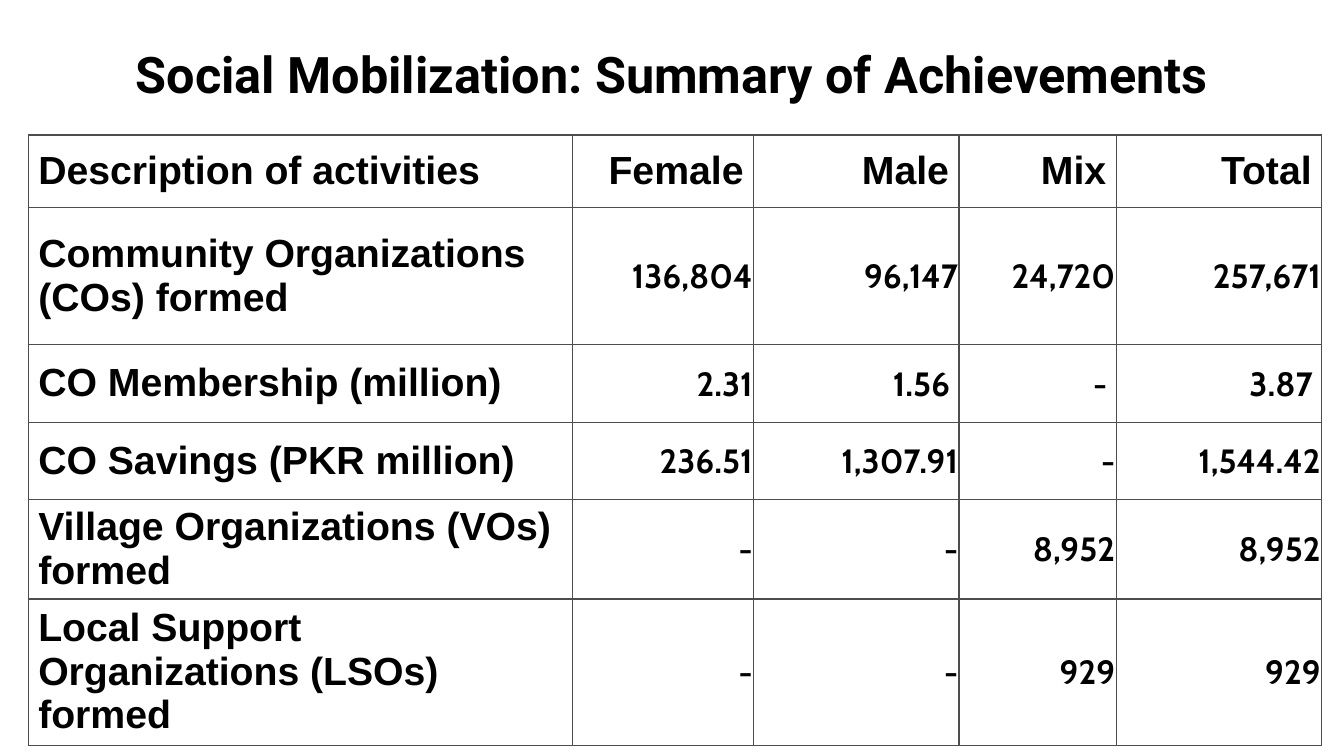
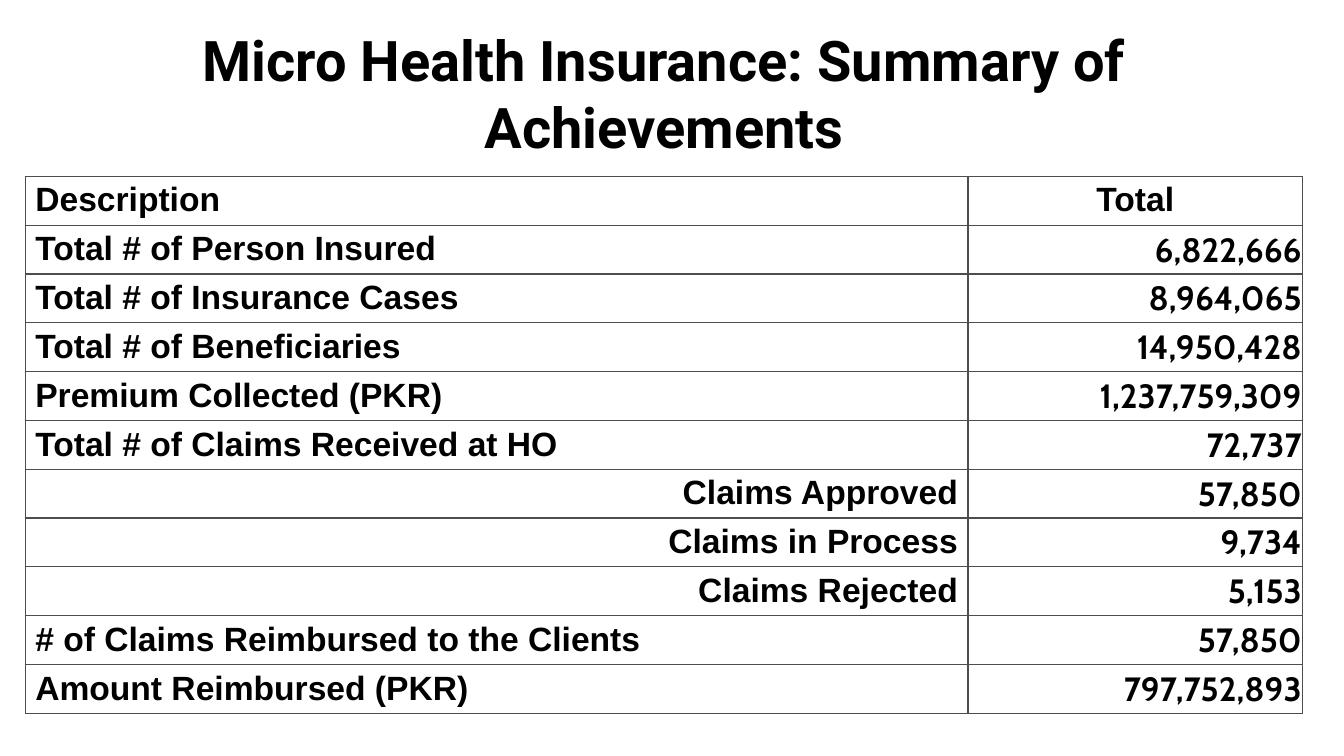
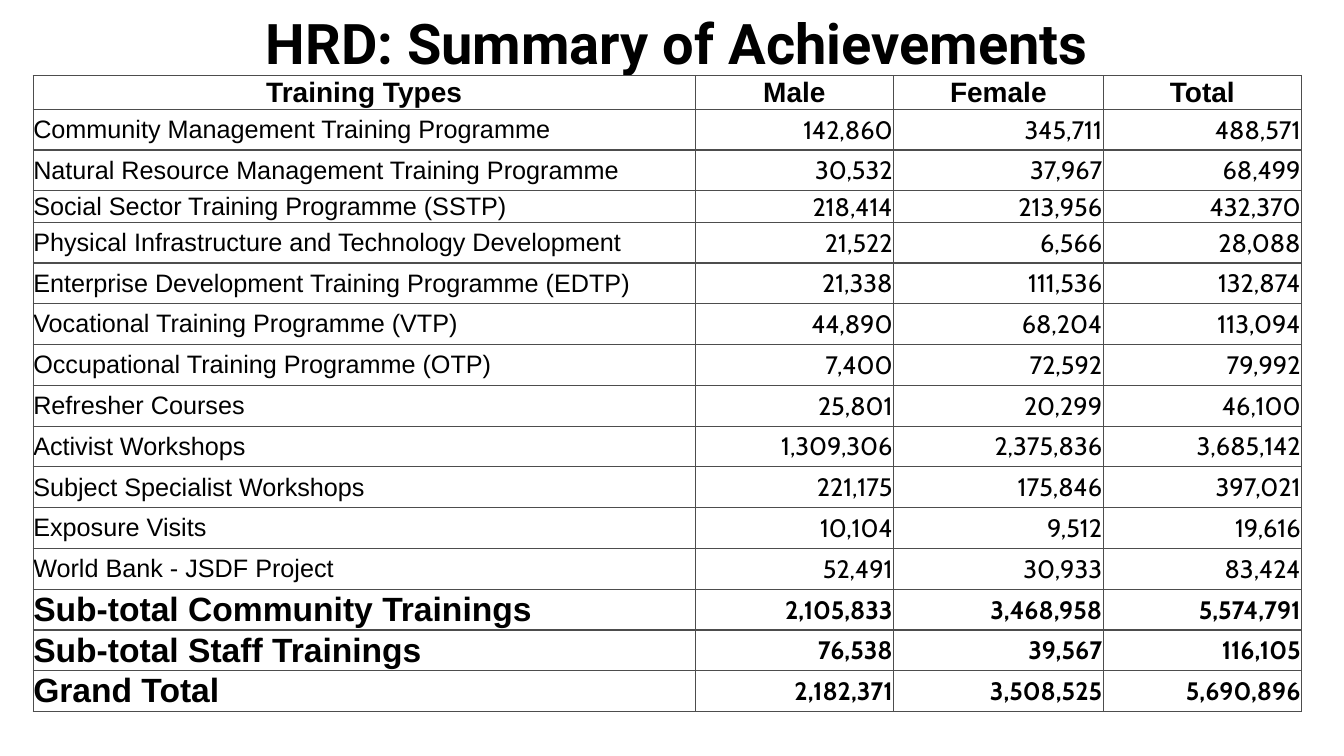
from collections import namedtuple

from lxml import etree
from pptx import Presentation
from pptx.dml.color import RGBColor
from pptx.enum.text import MSO_ANCHOR, PP_ALIGN
from pptx.oxml.ns import qn
from pptx.util import Inches, Pt

LEFT, CENTER, RIGHT = PP_ALIGN.LEFT, PP_ALIGN.CENTER, PP_ALIGN.RIGHT
MIDDLE = MSO_ANCHOR.MIDDLE

BLACK = RGBColor(0x00, 0x00, 0x00)
WHITE = RGBColor(0xFF, 0xFF, 0xFF)
RULE = RGBColor(0x4D, 0x4D, 0x4D)
TITLE_FONT, LABEL_FONT, FIGURE_FONT = "Roboto", "Arial", "Cabin"
BLANK_LAYOUT = 6

Box = namedtuple("Box", "left top width height")
CellStyle = namedtuple("CellStyle", "font size bold align insets")
ROOMY = (0.1, 0.02, 0.1, 0.03)
NARROW = (0.01, 0.01, 0.01, 0)
INDENTED = (0.01, 0.01, 0.09, 0)
TIGHT = (0, 0, 0, 0)

MOBILIZATION = [
    ("Description of activities", "Female", "Male", "Mix", "Total"),
    ("Community Organizations (COs) formed", "136,804", "96,147", "24,720", "257,671"),
    ("CO Membership (million)", "2.31", "1.56", "-", "3.87"),
    ("CO Savings (PKR million)", "236.51", "1,307.91", "-", "1,544.42"),
    ("Village Organizations (VOs) formed", "-", "-", "8,952", "8,952"),
    ("Local Support Organizations (LSOs) formed", "-", "-", "929", "929"),
]
MEMBERSHIP_ROW = 2

INSURANCE = [
    ("Description", "Total"),
    ("Total # of Person Insured", "6,822,666"),
    ("Total # of Insurance Cases", "8,964,065"),
    ("Total # of Beneficiaries", "14,950,428"),
    ("Premium Collected (PKR)", "1,237,759,309"),
    ("Total # of Claims Received at HO", "72,737"),
    ("Claims Approved", "57,850"),
    ("Claims in Process", "9,734"),
    ("Claims Rejected", "5,153"),
    ("# of Claims Reimbursed to the Clients", "57,850"),
    ("Amount Reimbursed (PKR)", "797,752,893"),
]
CLAIM_OUTCOME_ROWS = range(6, 9)

TRAINING = [
    ("Training Types", "Male", "Female", "Total"),
    ("Community Management Training Programme", "142,860", "345,711", "488,571"),
    ("Natural Resource Management Training Programme", "30,532", "37,967", "68,499"),
    ("Social Sector Training Programme (SSTP)", "218,414", "213,956", "432,370"),
    ("Physical Infrastructure and Technology Development", "21,522", "6,566", "28,088"),
    ("Enterprise Development Training Programme (EDTP)", "21,338", "111,536", "132,874"),
    ("Vocational Training Programme (VTP)", "44,890", "68,204", "113,094"),
    ("Occupational Training Programme (OTP)", "7,400", "72,592", "79,992"),
    ("Refresher Courses", "25,801", "20,299", "46,100"),
    ("Activist Workshops", "1,309,306", "2,375,836", "3,685,142"),
    ("Subject Specialist Workshops", "221,175", "175,846", "397,021"),
    ("Exposure Visits", "10,104", "9,512", "19,616"),
    ("World Bank - JSDF Project", "52,491", "30,933", "83,424"),
    ("Sub-total Community Trainings", "2,105,833", "3,468,958", "5,574,791"),
    ("Sub-total Staff Trainings", "76,538", "39,567", "116,105"),
    ("Grand Total", "2,182,371", "3,508,525", "5,690,896"),
]
FIRST_TOTAL_ROW = 13


def inches(box):
    """Convert a box to slide lengths."""
    return [Inches(length) for length in box]


def set_paragraph(paragraph, text, font, size, bold, align):
    """Write one paragraph in the shared text colour."""
    paragraph.text = text
    paragraph.alignment = align
    paragraph.font.name = font
    paragraph.font.size = Pt(size)
    paragraph.font.bold = bold
    paragraph.font.color.rgb = BLACK


def add_title(slide, box, text, size):
    """Place the centred bold title in its box."""
    frame = slide.shapes.add_textbox(*inches(box)).text_frame
    frame.word_wrap = True
    frame.vertical_anchor = MIDDLE
    set_paragraph(frame.paragraphs[0], text, TITLE_FONT, size, True, CENTER)


def add_borders(cell):
    """Rule all four sides of a cell."""
    properties = cell._tc.get_or_add_tcPr()
    for side in ("a:lnL", "a:lnR", "a:lnT", "a:lnB"):
        line = etree.SubElement(properties, qn(side), w=str(Pt(1)))
        fill = etree.SubElement(line, qn("a:solidFill"))
        etree.SubElement(fill, qn("a:srgbClr"), val=str(RULE))


def fill_cell(cell, text, style):
    """Write and format one table cell."""
    add_borders(cell)
    cell.fill.solid()
    cell.fill.fore_color.rgb = WHITE
    cell.vertical_anchor = MIDDLE
    (cell.margin_left, cell.margin_top,
     cell.margin_right, cell.margin_bottom) = inches(style.insets)
    set_paragraph(cell.text_frame.paragraphs[0], text,
                  style.font, style.size, style.bold, style.align)


def add_grid(slide, box, records, column_weights, row_weights, style_of):
    """Share the box among weighted columns and rows of a table."""
    table = slide.shapes.add_table(
        len(records), len(column_weights), *inches(box)).table
    table.horz_banding = False
    for column, weight in zip(table.columns, column_weights):
        column.width = Inches(box.width * weight / sum(column_weights))
    for row, weight in zip(table.rows, row_weights):
        row.height = Inches(box.height * weight / sum(row_weights))
    for r, record in enumerate(records):
        for c, text in enumerate(record):
            fill_cell(table.cell(r, c), text, style_of(r, c))


def mobilization_style(row, column):
    """Style a cell of the social mobilization table."""
    if row == 0 or column == 0:
        return CellStyle(LABEL_FONT, 28, True, RIGHT if column else LEFT, ROOMY)
    insets = INDENTED if row == MEMBERSHIP_ROW and column > 1 else NARROW
    return CellStyle(FIGURE_FONT, 24, True, RIGHT, insets)


def insurance_style(row, column):
    """Style a cell of the health insurance table."""
    if row == 0:
        return CellStyle(LABEL_FONT, 24, True, CENTER if column else LEFT, ROOMY)
    if column == 0:
        align = RIGHT if row in CLAIM_OUTCOME_ROWS else LEFT
        return CellStyle(LABEL_FONT, 24, True, align, ROOMY)
    return CellStyle(FIGURE_FONT, 24, True, RIGHT, NARROW)


def training_style(row, column):
    """Style a cell of the training table."""
    if row == 0:
        return CellStyle(LABEL_FONT, 20, True, CENTER, TIGHT)
    is_total = row >= FIRST_TOTAL_ROW
    if column == 0:
        return CellStyle(LABEL_FONT, 24 if is_total else 18, is_total, LEFT, TIGHT)
    return CellStyle(FIGURE_FONT, 18, is_total, RIGHT, NARROW)


def add_summary(deck, title, title_box, title_size, grid_box, *grid):
    """Add one slide with a title above a table."""
    slide = deck.slides.add_slide(deck.slide_layouts[BLANK_LAYOUT])
    add_title(slide, title_box, title, title_size)
    add_grid(slide, grid_box, *grid)


def main():
    """Build and save the deck."""
    deck = Presentation()
    deck.slide_width, deck.slide_height = Inches(13.33), Inches(7.5)
    add_summary(
        deck, "Social Mobilization: Summary of Achievements",
        Box(0.25, 0.34, 12.83, 0.78), 36, Box(0.28, 1.34, 12.83, 5.99),
        MOBILIZATION, (5.4, 1.8, 2.04, 1.56, 2.04),
        (0.72, 1.36, 0.77, 0.77, 0.97, 1.4), mobilization_style)
    add_summary(
        deck, "Micro Health Insurance: Summary of Achievements",
        Box(0.25, 0.24, 12.67, 1.35), 40, Box(0.25, 1.75, 12.67, 5.33),
        INSURANCE, (9.35, 3.32), [1] * len(INSURANCE), insurance_style)
    add_summary(
        deck, "HRD: Summary of Achievements",
        Box(0.5, 0.08, 12.42, 0.67), 40, Box(0.33, 0.75, 12.58, 6.3),
        TRAINING, (6.57, 1.97, 2.08, 1.97),
        [0.33, 0.41, 0.41, 0.31] + [0.41] * (len(TRAINING) - 4), training_style)
    deck.save("out.pptx")


if __name__ == "__main__":
    main()
